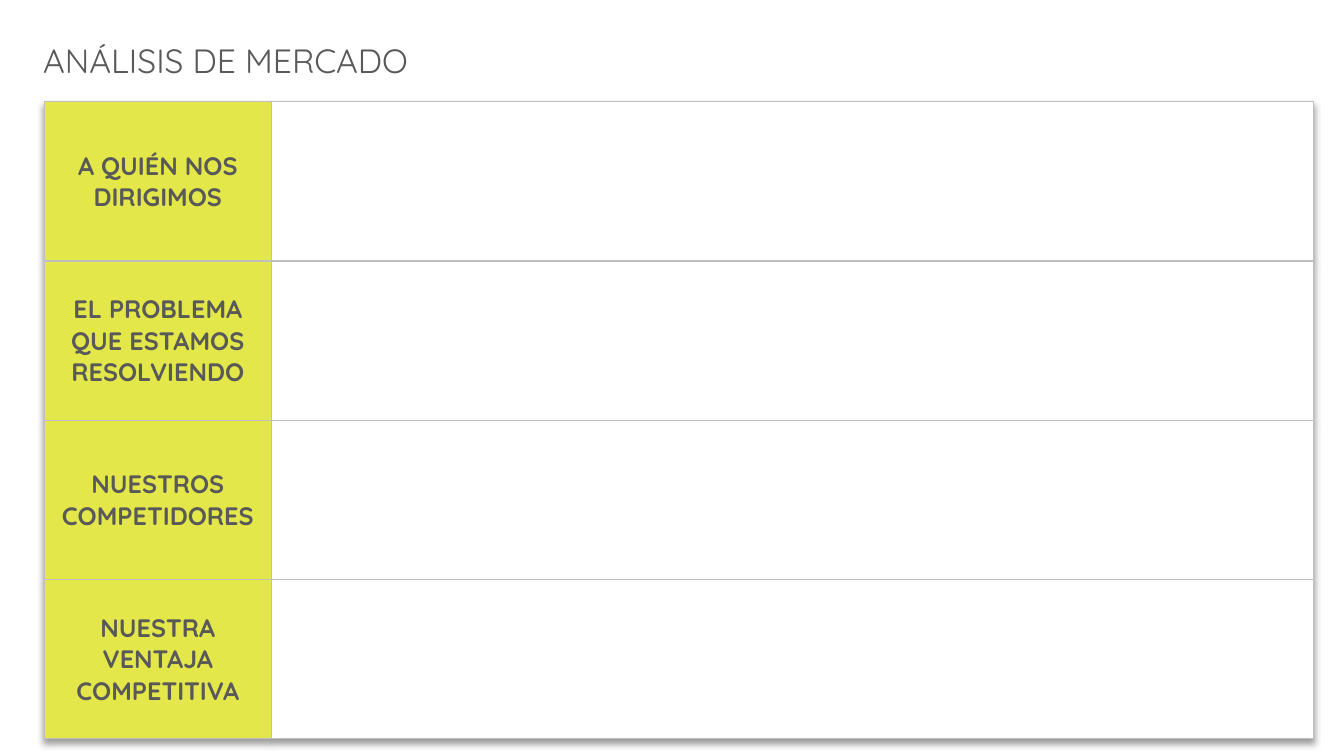
from dataclasses import dataclass

from lxml.etree import SubElement, Element
from pptx import Presentation
from pptx.dml.color import RGBColor
from pptx.enum.text import MSO_ANCHOR as Anchor, MSO_AUTO_SIZE as AutoSize, PP_ALIGN as Align
from pptx.oxml.ns import qn
from pptx.slide import Slide
from pptx.table import Table, _Cell as Cell
from pptx.text.text import _Paragraph as Paragraph
from pptx.util import Emu, Pt

EMU_PER_PX = 9144
FONT = "Quicksand"
TEXT_COLOR = "595959"
LABEL_FILL = "E3E749"
ANSWER_FILL = "FFFFFF"
BORDER_COLOR = "BFBFBF"
LABEL_WIDTH = 225
ANSWER_WIDTH = 1034
ROW_HEIGHT = 158


@dataclass(frozen=True)
class Box:
    left: int
    top: int
    width: int
    height: int

    def emu(self) -> tuple[Emu, Emu, Emu, Emu]:
        return px(self.left), px(self.top), px(self.width), px(self.height)


@dataclass(frozen=True)
class Topic:
    label: str


TOPICS = [
    Topic("A QUIÉN NOS DIRIGIMOS"),
    Topic("EL PROBLEMA QUE ESTAMOS RESOLVIENDO"),
    Topic("NUESTROS COMPETIDORES"),
    Topic("NUESTRA VENTAJA COMPETITIVA"),
]


def px(length: int) -> Emu:
    return Emu(length * EMU_PER_PX)


def color(value: str) -> RGBColor:
    return RGBColor.from_string(value)


def add_run(paragraph: Paragraph, text: str, size: int, bold: bool = False) -> None:
    run = paragraph.add_run()
    run.text = text
    run.font.name = FONT
    run.font.size = Pt(size)
    run.font.bold = bold
    run.font.color.rgb = color(TEXT_COLOR)


def add_title(slide: Slide, text: str, box: Box) -> None:
    frame = slide.shapes.add_textbox(*box.emu()).text_frame
    frame.word_wrap = True
    frame.auto_size = AutoSize.SHAPE_TO_FIT_TEXT
    add_run(frame.paragraphs[0], text, 24)


def style_cell(cell: Cell, fill: str) -> None:
    cell.vertical_anchor = Anchor.MIDDLE
    cell.fill.solid()
    cell.fill.fore_color.rgb = color(fill)
    properties = cell._tc.get_or_add_tcPr()
    for position, side in enumerate(("a:lnL", "a:lnR", "a:lnT", "a:lnB")):
        line = Element(qn(side), w=str(Pt(1)))
        solid = SubElement(line, qn("a:solidFill"))
        SubElement(solid, qn("a:srgbClr"), val=BORDER_COLOR)
        properties.insert(position, line)


def add_shadow(table: Table) -> None:
    effects = Element(qn("a:effectLst"))
    shadow = SubElement(
        effects, qn("a:outerShdw"), blurRad=str(Pt(4)), dist=str(Pt(3)),
        dir="5400000", algn="t", rotWithShape="0",
    )
    shade = SubElement(shadow, qn("a:srgbClr"), val="000000")
    SubElement(shade, qn("a:alpha"), val="40000")
    table._tbl.tblPr.insert(0, effects)


def add_topic_table(slide: Slide, topics: list[Topic], left: int, top: int) -> None:
    box = Box(left, top, LABEL_WIDTH + ANSWER_WIDTH, ROW_HEIGHT * len(topics))
    table = slide.shapes.add_table(len(topics), 2, *box.emu()).table
    table.first_row = False
    table.horz_banding = False
    for column, width in zip(table.columns, (LABEL_WIDTH, ANSWER_WIDTH)):
        column.width = px(width)
    for index, topic in enumerate(topics):
        table.rows[index].height = px(ROW_HEIGHT)
        label = table.cell(index, 0)
        style_cell(label, LABEL_FILL)
        style_cell(table.cell(index, 1), ANSWER_FILL)
        paragraph = label.text_frame.paragraphs[0]
        paragraph.alignment = Align.CENTER
        add_run(paragraph, topic.label, 18, bold=True)
    add_shadow(table)


def main() -> None:
    presentation = Presentation()
    presentation.slide_width = px(1333)
    presentation.slide_height = px(750)
    slide = presentation.slides.add_slide(presentation.slide_layouts[6])
    add_title(slide, "ANÁLISIS DE MERCADO", Box(33, 35, 808, 50))
    add_topic_table(slide, TOPICS, 44, 101)
    presentation.save("out.pptx")


if __name__ == "__main__":
    main()
